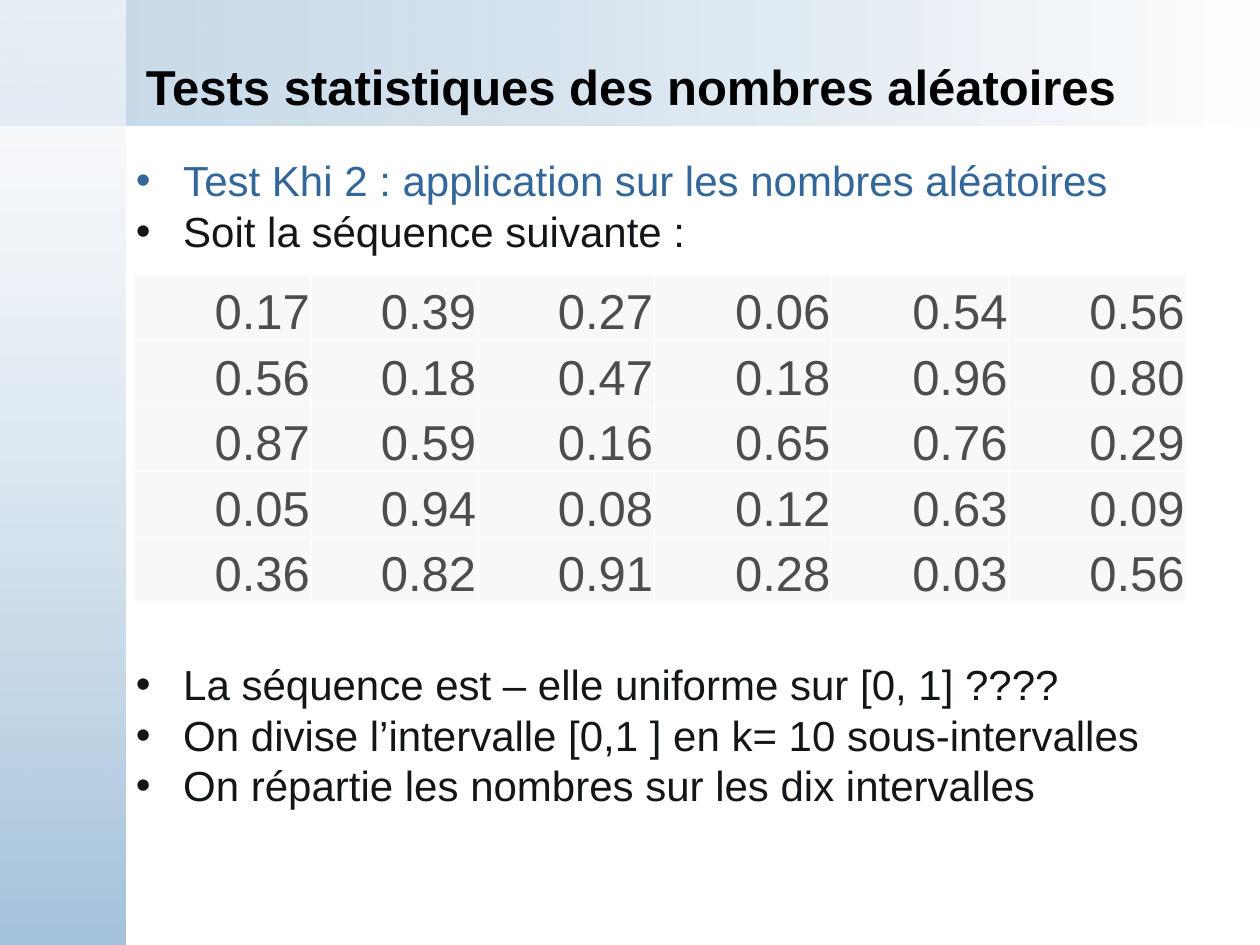
from lxml.etree import SubElement
from pptx import Presentation
from pptx.dml.color import RGBColor
from pptx.enum.shapes import MSO_SHAPE
from pptx.enum.text import MSO_ANCHOR, PP_ALIGN
from pptx.oxml import parse_xml
from pptx.oxml.ns import nsdecls, qn
from pptx.util import Pt

FONT = "Arial"
WHITE = RGBColor(0xFF, 0xFF, 0xFF)
BLACK = RGBColor(0x00, 0x00, 0x00)
SKY = RGBColor(0xA5, 0xC3, 0xDB)
ACCENT = RGBColor(0x33, 0x66, 0x99)
INK = RGBColor(0x13, 0x16, 0x18)
CELL_TEXT = RGBColor(0x4D, 0x4D, 0x4D)
CELL_FILL = RGBColor(0xF7, 0xF8, 0xF8)

LINE_HEIGHT = 28.8
TABLE_GAP = 8 * LINE_HEIGHT
INDENT = 27
COLUMN_WIDTHS = [101.25, 95, 101.25, 101.25, 101.25, 101.25]
ROW_HEIGHT = 37.44

# Text, colour, space before
BULLETS = [
    ("Test Khi 2 : application sur les nombres aléatoires", ACCENT, 0),
    ("Soit la séquence suivante :", INK, 0),
    ("La séquence est – elle uniforme sur [0, 1] ????", INK, TABLE_GAP),
    ("On divise l’intervalle [0,1 ] en k= 10 sous-intervalles", INK, 0),
    ("On répartie les nombres sur les dix intervalles", INK, 0),
]
SEQUENCE = [
    ["0.17", "0.39", "0.27", "0.06", "0.54", "0.56"],
    ["0.56", "0.18", "0.47", "0.18", "0.96", "0.80"],
    ["0.87", "0.59", "0.16", "0.65", "0.76", "0.29"],
    ["0.05", "0.94", "0.08", "0.12", "0.63", "0.09"],
    ["0.36", "0.82", "0.91", "0.28", "0.03", "0.56"],
]


def add_gradient_band(slide, width, height, colors, angle, start_opacity):
    """Add a band from the top left corner; its first colour is see-through."""
    shape = slide.shapes.add_shape(MSO_SHAPE.RECTANGLE, 0, 0, Pt(width), Pt(height))
    shape.shadow.inherit = False
    shape.line.fill.background()
    shape.fill.gradient()
    shape.fill.gradient_angle = angle
    for stop, color, position in zip(shape.fill.gradient_stops, colors, (0, 1)):
        stop.color.rgb = color
        stop.position = position
    first_color = next(shape.fill._xPr.iter(qn("a:srgbClr")))
    SubElement(first_color, qn("a:alpha"), val=str(start_opacity * 1000))


def add_text_box(slide, left, top, width, height, anchor):
    text_box = slide.shapes.add_textbox(Pt(left), Pt(top), Pt(width), Pt(height))
    frame = text_box.text_frame
    frame.word_wrap = True
    frame.vertical_anchor = anchor
    return frame


def add_run(paragraph, text, size, color, bold=False):
    run = paragraph.add_run()
    run.text = text
    run.font.name = FONT
    run.font.size = Pt(size)
    run.font.bold = bold
    run.font.color.rgb = color


def set_bullet(paragraph):
    properties = paragraph._p.get_or_add_pPr()
    properties.set("marL", str(Pt(INDENT)))
    properties.set("indent", str(-Pt(INDENT)))
    SubElement(properties, qn("a:buFont"), typeface=FONT)
    SubElement(properties, qn("a:buChar"), char="•")


def add_bullets(frame):
    for index, (text, color, space_before) in enumerate(BULLETS):
        paragraph = frame.add_paragraph() if index else frame.paragraphs[0]
        set_bullet(paragraph)
        paragraph.line_spacing = Pt(LINE_HEIGHT)
        paragraph.space_before = Pt(space_before)
        add_run(paragraph, text, 24, color)


def set_borders(cell):
    properties = cell._tc.get_or_add_tcPr()
    for index, side in enumerate(("lnL", "lnR", "lnT", "lnB")):
        properties.insert(index, parse_xml(
            f'<a:{side} {nsdecls("a")} w="{Pt(1)}"><a:solidFill>'
            f'<a:srgbClr val="{WHITE}"/></a:solidFill></a:{side}>'))


def fill_cell(cell, text):
    cell.margin_left = cell.margin_right = cell.margin_top = Pt(0.72)
    cell.margin_bottom = 0
    cell.vertical_anchor = MSO_ANCHOR.BOTTOM
    cell.fill.solid()
    cell.fill.fore_color.rgb = CELL_FILL
    set_borders(cell)
    paragraph = cell.text_frame.paragraphs[0]
    paragraph.alignment = PP_ALIGN.RIGHT
    add_run(paragraph, text, 28, CELL_TEXT)


def add_sequence_table(slide, left, top):
    table = slide.shapes.add_table(
        len(SEQUENCE), len(COLUMN_WIDTHS), Pt(left), Pt(top),
        Pt(sum(COLUMN_WIDTHS)), Pt(ROW_HEIGHT * len(SEQUENCE))).table
    table.first_row = False
    table.horz_banding = False
    for column, width in zip(table.columns, COLUMN_WIDTHS):
        column.width = Pt(width)
    for row, values in zip(table.rows, SEQUENCE):
        row.height = Pt(ROW_HEIGHT)
        for cell, value in zip(row.cells, values):
            fill_cell(cell, value)


def main():
    presentation = Presentation()
    presentation.slide_width = Pt(720)
    presentation.slide_height = Pt(540)
    slide = presentation.slides.add_slide(presentation.slide_layouts[6])

    add_gradient_band(slide, 720, 72, (SKY, WHITE), 0, 62)
    add_gradient_band(slide, 72, 540, (WHITE, SKY), 270, 59)

    title = add_text_box(slide, 76.3, 31.7, 613.4, 35.3, MSO_ANCHOR.MIDDLE)
    add_run(title.paragraphs[0], "Tests statistiques des nombres aléatoires",
            28, BLACK, bold=True)
    add_bullets(add_text_box(slide, 70.6, 85, 649.4, 414.7, MSO_ANCHOR.TOP))
    add_sequence_table(slide, 76.5, 157)

    presentation.save("out.pptx")


if __name__ == "__main__":
    main()
